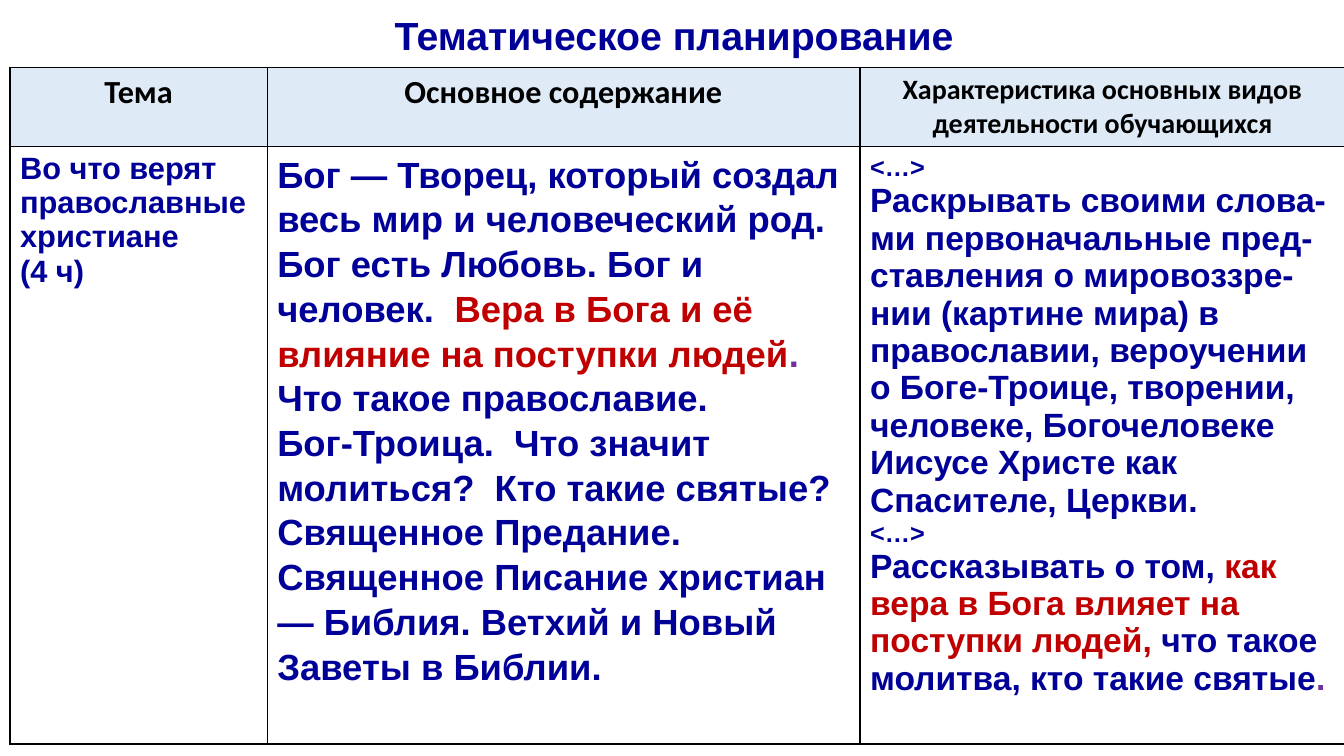
import pptx
import pptx.dml.color
import pptx.enum.text
import pptx.oxml
import pptx.oxml.ns
import pptx.util
from pptx.util import Inches

COLOURS = {"navy": "000099", "red": "C00000", "purple": "7030A0",
           "black": "000000", "header": "DEEBF7", "white": "FFFFFF"}
COLUMN_WIDTHS = (2.55, 5.88, 4.81)
ROW_HEIGHTS = (0.78, 5.51)
CENTER = pptx.enum.text.PP_ALIGN.CENTER

HEADERS = (("Тема", 23), ("Основное содержание", 23),
           ("Характеристика основных видов деятельности обучающихся", 20))
TOPIC = [(22, None, [("Во что верят православные христиане \n(4 ч)", "navy")])]
CONTENT = [(26, 1.1, [
    ("Бог — Творец, который создал весь мир и человеческий род.  Бог есть Любовь. "
     "Бог и человек.  ", "navy"),
    ("Вера в Бога и её влияние на поступки людей", "red"),
    (".  ", "purple"),
    ("Что такое православие. \nБог-Троица.  Что значит молиться?  Кто такие святые? "
     "Священное Предание. \nСвященное Писание христиан — Библия. "
     "Ветхий и Новый Заветы в Библии.", "navy")])]
ACTIVITIES = [
    (18, 1.1, [("<…>", "navy")]),
    (24, None, [("Раскрывать своими слова-ми первоначальные пред-ставления о мировоззре-нии "
                 "(картине мира) в православии, вероучении о Боге-Троице, творении, человеке, "
                 "Богочеловеке Иисусе Христе как Спасителе, Церкви.", "navy")]),
    (18, None, [("<…>", "navy")]),
    (24, None, [("Рассказывать о том, ", "navy"),
                ("как вера в Бога влияет на поступки людей, ", "red"),
                ("что такое молитва, кто такие святые", "navy"),
                (".", "purple")])]


def colour(name):
    """Return the named colour as an RGB value."""
    return pptx.dml.color.RGBColor.from_string(COLOURS[name])


def add_runs(paragraph, runs, size, font="Arial"):
    """Add bold coloured runs, turning newlines into line breaks."""
    formats = {"name": font, "size": pptx.util.Pt(size), "bold": True}
    for text, colour_name in runs:
        for index, line in enumerate(text.split("\n")):
            if index:
                paragraph.add_line_break()
            run = paragraph.add_run()
            run.text = line
            for attribute, value in formats.items():
                setattr(run.font, attribute, value)
            run.font.color.rgb = colour(colour_name)


def fill_text(text_frame, paragraphs, font="Arial", alignment=None):
    """Write paragraphs given as size, line spacing and runs."""
    for index, (size, spacing, runs) in enumerate(paragraphs):
        paragraph = text_frame.add_paragraph() if index else text_frame.paragraphs[0]
        formats = {"alignment": alignment, "line_spacing": spacing}
        for attribute, value in formats.items():
            setattr(paragraph, attribute, value)
        add_runs(paragraph, runs, size, font)


def style_cell(cell, fill):
    """Set the cell's fill and black borders."""
    properties = cell._tc.get_or_add_tcPr()
    for side in ("lnL", "lnR", "lnT", "lnB"):
        properties.append(pptx.oxml.parse_xml(
            f'<a:{side} {pptx.oxml.ns.nsdecls("a")} w="12700"><a:solidFill>'
            f'<a:srgbClr val="{COLOURS["black"]}"/></a:solidFill></a:{side}>'))
    cell.fill.solid()
    cell.fill.fore_color.rgb = colour(fill)


def add_title(slide, text):
    """Add the centred slide title."""
    box = slide.shapes.add_textbox(Inches(0.2), Inches(-0.03), Inches(12.97), Inches(0.81))
    box.text_frame.word_wrap = True
    fill_text(box.text_frame, [(28, 1.2, [(text, "navy")])], alignment=CENTER)


def add_plan(slide):
    """Add the planning table."""
    table = slide.shapes.add_table(
        len(ROW_HEIGHTS), len(COLUMN_WIDTHS), Inches(0.1), Inches(0.67),
        Inches(sum(COLUMN_WIDTHS)), Inches(sum(ROW_HEIGHTS))).table
    for row, height in zip(table.rows, ROW_HEIGHTS):
        row.height = Inches(height)
    bodies = (TOPIC, CONTENT, ACTIVITIES)
    for index, width in enumerate(COLUMN_WIDTHS):
        table.columns[index].width = Inches(width)
        header, body = table.cell(0, index), table.cell(1, index)
        style_cell(header, "header")
        style_cell(body, "white")
        text, size = HEADERS[index]
        fill_text(header.text_frame, [(size, None, [(text, "black")])], "Calibri", CENTER)
        fill_text(body.text_frame, bodies[index])


def main():
    """Build and save the slide."""
    presentation = pptx.Presentation()
    presentation.slide_width = Inches(13.33)
    presentation.slide_height = Inches(7.5)
    slide = presentation.slides.add_slide(presentation.slide_layouts[6])
    add_title(slide, "Тематическое планирование")
    add_plan(slide)
    presentation.save("out.pptx")


if __name__ == "__main__":
    main()
